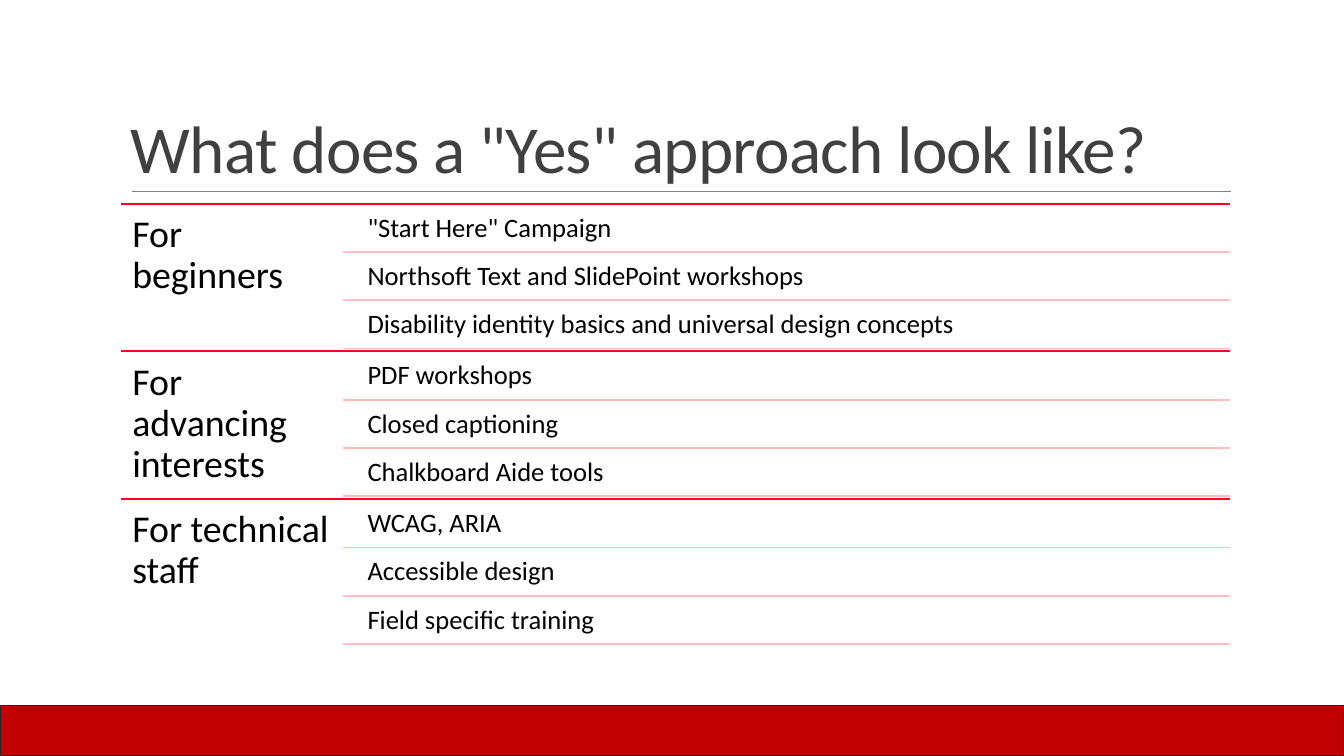
from pptx import Presentation
from pptx.dml.color import RGBColor as RGB
from pptx.enum.shapes import MSO_CONNECTOR as CONN, MSO_SHAPE as SHAPE
from pptx.enum.text import MSO_ANCHOR as ANCHOR, PP_ALIGN as ALIGN
from pptx.oxml.ns import qn
from pptx.util import Pt
from lxml.etree import SubElement

PX = 6350
THEME = {
    "font": "Calibri",
    "title": "404040", "text": "000000", "rule": "808080",
    "band": "C00000", "band_line": "262626",
    "group_line": "FE0226", "item_line": "FFBDBE",
    "title_pt": 48, "group_pt": 27, "item_pt": 19,
}
GROUPS = [
    ("For beginners", [
        "\"Start Here\" Campaign",
        "Northsoft Text and SlidePoint workshops",
        "Disability identity basics and universal design concepts"]),
    ("For advancing interests", [
        "PDF workshops", "Closed captioning", "Chalkboard Aide tools"]),
    ("For technical staff", [
        "WCAG, ARIA", "Accessible design", "Field specific training"]),
]
LEFT, RIGHT, TOP = 173, 1757, 291
ITEM_LEFT, ITEM_TEXT = 490, 513
GROUP_H, ITEM_H = 211, 69

prs = Presentation()
prs.slide_width, prs.slide_height = 1920 * PX, 1080 * PX
s = prs.slides.add_slide(prs.slide_layouts[5])


def add_rule(x1, x2, y, color, width=1.25):
    c = s.shapes.add_connector(CONN.STRAIGHT, x1 * PX, y * PX, x2 * PX, y * PX)
    c.line.color.rgb = RGB.from_string(THEME[color])
    c.line.width = Pt(width)
    SubElement(c._element.spPr, qn("a:effectLst"))


def set_text(sp, box, text, size, color, inset, spacing, anchor=ANCHOR.TOP):
    sp.left, sp.top, sp.width, sp.height = [v * PX for v in box]
    tf = sp.text_frame
    tf.word_wrap = True
    tf.vertical_anchor = anchor
    tf.margin_left = tf.margin_right = inset[0] * PX
    tf.margin_top = tf.margin_bottom = inset[1] * PX
    p = tf.paragraphs[0]
    p.alignment = ALIGN.LEFT
    p.line_spacing = spacing
    r = p.add_run()
    r.text = text
    r.font.name = THEME["font"]
    r.font.size = Pt(THEME[size])
    r.font.color.rgb = RGB.from_string(THEME[color])
    return r


band = s.shapes.add_shape(SHAPE.RECTANGLE, 0, 1008 * PX, 1920 * PX, 72 * PX)
band.shadow.inherit = False
band.fill.solid()
band.fill.fore_color.rgb = RGB.from_string(THEME["band"])
band.line.color.rgb = RGB.from_string(THEME["band_line"])
band.line.width = Pt(1.25)

add_rule(189, 1758, 274, "rule", 0.5)
r = set_text(s.shapes.title, (LEFT, 45, RIGHT - LEFT, 229),
             "What does a \"Yes\" approach look like?",
             "title_pt", "title", (14, 7), 0.85, ANCHOR.BOTTOM)
r.font._element.set("spc", "-50")

for i, (group, items) in enumerate(GROUPS):
    y = TOP + i * GROUP_H
    add_rule(LEFT, RIGHT, y, "group_line")
    set_text(s.shapes.add_textbox(0, 0, 0, 0),
             (LEFT, y, ITEM_LEFT - LEFT, GROUP_H),
             group, "group_pt", "text", (16, 16), 0.9)
    for j, item in enumerate(items):
        item_y = y + j * ITEM_H
        set_text(s.shapes.add_textbox(0, 0, 0, 0),
                 (ITEM_TEXT, item_y + 3, RIGHT - ITEM_TEXT, ITEM_H - 3),
                 item, "item_pt", "text", (12, 12), 0.9)
        add_rule(ITEM_LEFT, RIGHT, item_y + ITEM_H, "item_line")

prs.save("out.pptx")
